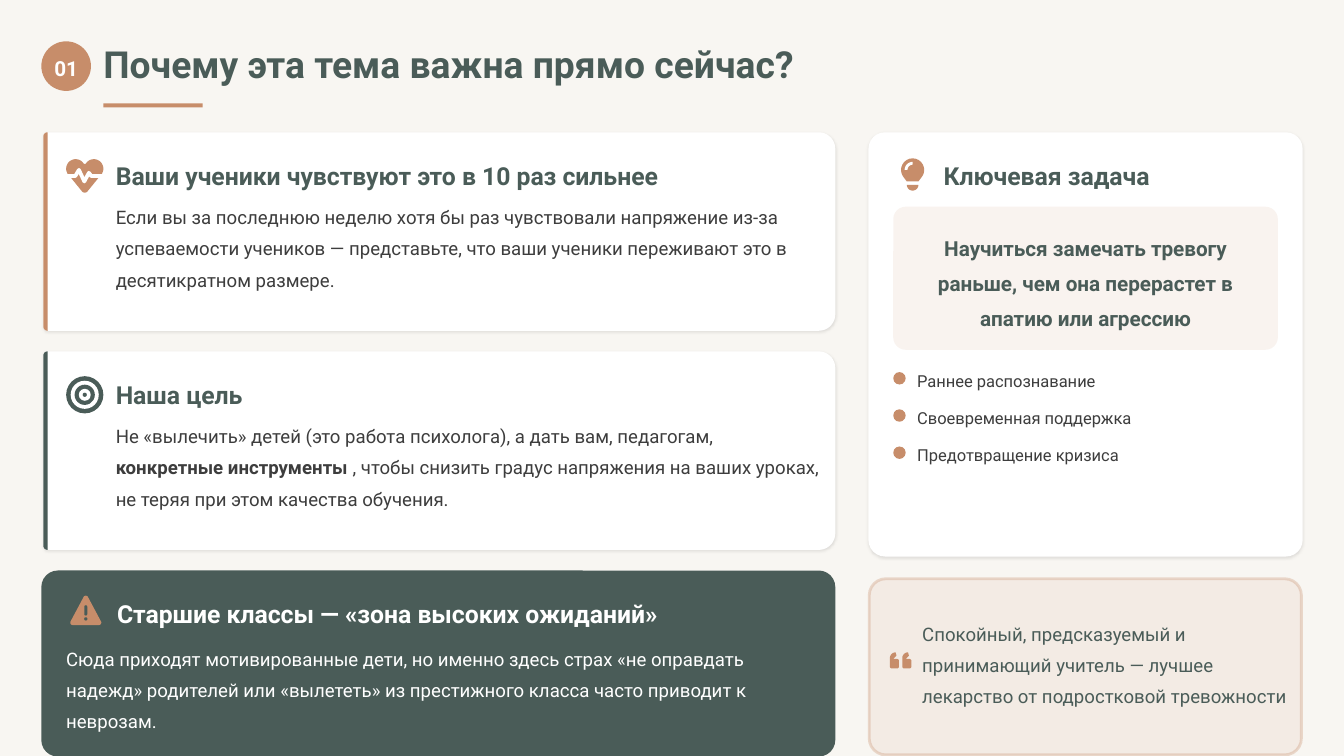
import math
from lxml import etree
from pptx import Presentation
from pptx.dml.color import RGBColor
from pptx.enum import shapes, text
from pptx.oxml import ns
from pptx import util as u

WIDE, HIGH = u.Inches(13.33), u.Inches(7.5)
UNIT = WIDE / 325
HUES = {"page": "F8F6F2", "clay": "C78D6A", "pine": "4A5C58",
        "white": "FFFFFF", "ink": "3D3D3D", "black": "000000"}
KIND = shapes.MSO_SHAPE
ROUND, OVAL, RECT = KIND.ROUNDED_RECTANGLE, KIND.OVAL, KIND.RECTANGLE


def emu(*vals):
    """Turn grid units into whole EMU."""
    return [round(v * UNIT) for v in vals]


def rgb(hue):
    """Look up a colour by its name."""
    return RGBColor.from_string(HUES[hue])


def fade(form, share):
    """Set the opacity of a solid fill or line, in percent."""
    tone = form._xPr.find(ns.qn("a:solidFill"))[0]
    etree.SubElement(tone, ns.qn("a:alpha")).set("val", str(share * 1000))


def shade(shape):
    """Give a card its soft drop shadow."""
    glow = shape._element.spPr.find(ns.qn("a:effectLst"))
    drop = etree.SubElement(glow, ns.qn("a:outerShdw"), blurRad=str(u.Pt(2.2)),
                            dist=str(u.Pt(0.7)), dir="5400000")
    tone = etree.SubElement(drop, ns.qn("a:srgbClr"), val=HUES["black"])
    etree.SubElement(tone, ns.qn("a:alpha"), val="10000")


def paint(shape, hue):
    """Fill a shape flat, without line or shadow."""
    shape.shadow.inherit = False
    shape.fill.solid()
    shape.fill.fore_color.rgb = rgb(hue)
    shape.line.fill.background()
    return shape


def block(slide, kind, box, hue, bend=0):
    """Add a preset shape, with a corner radius if asked."""
    shape = slide.shapes.add_shape(kind, *emu(*box))
    if bend:
        shape.adjustments[0] = bend / min(box[2:])
    return paint(shape, hue)


def trace(slide, spot, loops, closed=True):
    """Build an outline from point loops placed at a spot."""
    left, top = spot
    lines = [[emu(left + x, top + y) for x, y in loop] for loop in loops]
    pen = slide.shapes.build_freeform(*lines[0][0], scale=1.0)
    for step, line in enumerate(lines):
        if step:
            pen.move_to(*line[0])
        pen.add_line_segments(line[1:], close=closed)
    return pen.convert_to_shape()


def stroke(slide, spot, line, width):
    """Draw an open white line."""
    shape = trace(slide, spot, [line], False)
    shape.shadow.inherit = False
    shape.fill.background()
    shape.line.color.rgb = rgb("white")
    shape.line.width = u.Pt(width)


def arc(x, y, r, start, end):
    """List points along an arc, clockwise in degrees."""
    turns = [math.radians(start + (end - start) * k / 16) for k in range(17)]
    return [(x + r * math.cos(t), y + r * math.sin(t)) for t in turns]


def panel(w, h, near, far):
    """Outline a box with its own left and right corner radii."""
    return (arc(near, near, near, 180, 270) + arc(w - far, far, far, 270, 360)
            + arc(w - far, h - far, far, 0, 90)
            + arc(near, h - near, near, 90, 180))


def write(slide, box, parts, size, hue, bold=False, gap=1.1, mid=False, wrap=False):
    """Set text in a box; every second part is bold."""
    frame = slide.shapes.add_textbox(*emu(*box)).text_frame
    frame.margin_left = frame.margin_right = 0
    frame.margin_top = frame.margin_bottom = 0
    frame.vertical_anchor = text.MSO_ANCHOR.MIDDLE
    frame.word_wrap = wrap
    para = frame.paragraphs[0]
    para.line_spacing = gap
    para.alignment = text.PP_ALIGN.CENTER if mid else text.PP_ALIGN.LEFT
    for rank, part in enumerate(parts):
        run = para.add_run()
        run.text = part
        run.font.name, run.font.size = "Roboto", u.Pt(size)
        run.font.bold = bold or rank % 2 == 1
        run.font.color.rgb = rgb(hue)


def heart(slide, x, y):
    """Draw the heart with a pulse."""
    loop = (arc(2.3, 2.8, 2.3, 150, 330) + arc(6.7, 2.8, 2.3, 210, 390)
            + arc(4.5, 7.7, 0.9, 45, 135))
    paint(trace(slide, (x, y), [loop]), "clay")
    beat = [(0, 4.6), (2.2, 4.6), (3.1, 3.1), (4.4, 5.9), (5.5, 3.8), (6.1, 4.6), (9, 4.6)]
    stroke(slide, (x, y), beat, 2.7)


def target(slide, x, y):
    """Draw the target rings."""
    for rank, size in enumerate((9, 6.8, 4.9, 2.9, 1)):
        edge = (9 - size) / 2
        block(slide, OVAL, (x + edge, y + edge, size, size), ("pine", "white")[rank % 2])


def alert(slide, x, y):
    """Draw the warning triangle."""
    loop = (arc(3.75, 0.7, 0.6, 210, 330) + arc(6.9, 6.6, 0.6, 330, 450)
            + arc(0.6, 6.6, 0.6, 90, 210))
    paint(trace(slide, (x, y), [loop]), "clay")
    block(slide, ROUND, (x + 3.4, y + 2.4, 0.7, 2.5), "pine", 0.35)
    block(slide, OVAL, (x + 3.35, y + 5.3, 0.8, 0.8), "pine")


def bulb(slide, x, y):
    """Draw the light bulb."""
    head = arc(2.8, 2.8, 2.8, 145, 395) + [(4.2, 5.6), (1.4, 5.6)]
    paint(trace(slide, (x, y), [head, arc(2.8, 6.4, 1.4, 0, 180)]), "clay")
    stroke(slide, (x, y), arc(2.8, 2.8, 1.6, 180, 270), 2)


def quotes(slide, x, y):
    """Draw the pair of quote marks."""
    mark = (arc(1.4, 1.4, 1.4, 180, 270) + [(1.6, 0.8), (0.8, 1.6)]
            + arc(1.7, 2.1, 0.5, 270, 360) + arc(1.7, 3.4, 0.5, 0, 90)
            + arc(0.5, 3.4, 0.5, 90, 180))
    paint(trace(slide, (x, y), [mark, [(a + 3, b) for a, b in mark]]), "clay")


def header(slide, x, y, badge, title):
    """Place the number badge, the title and its rule."""
    block(slide, OVAL, (x, y, 12, 12), "clay")
    write(slide, (x - 1.2, y, 14.4, 12), [badge], 14.8, "white", True, 1.2, True)
    write(slide, (x + 15, y + 1, 170, 10), [title], 26.6, "pine", True, 0.9)
    block(slide, RECT, (x + 15, y + 15, 24, 1), "clay")


def card(slide, x, y, w, h, hue, icon, head, parts):
    """Place a white card with a coloured left edge."""
    spot = (x + 0.5, y)
    shade(paint(trace(slide, spot, [panel(w - 0.5, h, 1, 4)]), "white"))
    paint(trace(slide, spot, [panel(1, h, 1, 0)]), hue)
    icon(slide, x + 6, y + 6)
    write(slide, (x + 18, y + 6, w - 21, 8), [head], 17.7, "pine", True)
    write(slide, (x + 18, y + 16, w - 21.6, 22), parts, 13.3, "ink", gap=1.4, wrap=True)


def zone(slide, x, y, w, h, head, body):
    """Place the dark warning card."""
    block(slide, ROUND, (x, y, w, h), "pine", 4)
    alert(slide, x + 7, y + 6)
    write(slide, (x + 18.3, y + 6, w - 44, 8), [head], 17.7, "white", True)
    write(slide, (x + 6, y + 16.8, w - 9.7, 22), [body], 13.3, "white", gap=1.4, wrap=True)


def task(slide, x, y, w, h, head, claim, points):
    """Place the key task card with its claim and points."""
    shade(block(slide, ROUND, (x, y, w, h), "white", 4))
    bulb(slide, x + 7.9, y + 6.3)
    write(slide, (x + 18.2, y + 6, w / 2, 8), [head], 17.7, "pine", True)
    fade(block(slide, ROUND, (x + 6, y + 18, w - 12, 34.6), "clay", 3).fill, 10)
    write(slide, (x + 9.7, y + 23, w - 19.4, 24.6), [claim], 14.8, "pine", True, 1.4, True, True)
    for rank, point in enumerate(points):
        row = y + 58 + 9 * rank
        block(slide, OVAL, (x + 6, row, 3, 3), "clay")
        write(slide, (x + 11.8, row - 1.6, w - 18, 6), [point], 11.8, "ink", gap=1.3)


def motto(slide, x, y, w, h, body):
    """Place the framed quotation."""
    frame = block(slide, ROUND, (x, y, w, h), "clay", 4)
    fade(frame.fill, 10)
    frame.line.color.rgb = rgb("clay")
    frame.line.width = u.Pt(2)
    fade(frame.line.fill, 30)
    quotes(slide, x + 5, y + 17.8)
    write(slide, (x + 12.8, y + 5.1, w - 16, 29.3), [body], 13.3, "pine", gap=1.4, wrap=True)


def main():
    """Build and save the slide."""
    deck = Presentation()
    deck.slide_width, deck.slide_height = WIDE, HIGH
    slide = deck.slides.add_slide(deck.slide_layouts[6])
    slide.background.fill.solid()
    slide.background.fill.fore_color.rgb = rgb("page")
    header(slide, 10, 10, "01", "Почему эта тема важна прямо сейчас?")
    cards = [("clay", heart, "Ваши ученики чувствуют это в 10 раз сильнее",
              ["Если вы за последнюю неделю хотя бы раз чувствовали напряжение из-за успеваемости "
               "учеников — представьте, что ваши ученики переживают это в десятикратном размере."]),
             ("pine", target, "Наша цель",
              ["Не «вылечить» детей (это работа психолога), а дать вам, педагогам, ",
               "конкретные инструменты ",
               ", чтобы снизить градус напряжения на ваших уроках, "
               "не теряя при этом качества обучения."])]
    for rank, item in enumerate(cards):
        card(slide, 10, 32 + 53 * rank, 192, 48, *item)
    zone(slide, 10, 138, 192, 45, "Старшие классы — «зона высоких ожиданий»",
         "Сюда приходят мотивированные дети, но именно здесь страх «не оправдать надежд» родителей "
         "или «вылететь» из престижного класса часто приводит к неврозам.")
    task(slide, 210, 32, 105, 102.6, "Ключевая задача",
         "Научиться замечать тревогу раньше, чем она перерастет в апатию или агрессию",
         ["Раннее распознавание", "Своевременная поддержка", "Предотвращение кризиса"])
    motto(slide, 210.2, 140, 104.5, 42.6,
          "Спокойный, предсказуемый и принимающий учитель — лучшее лекарство "
          "от подростковой тревожности")
    deck.save("out.pptx")


if __name__ == "__main__":
    main()
